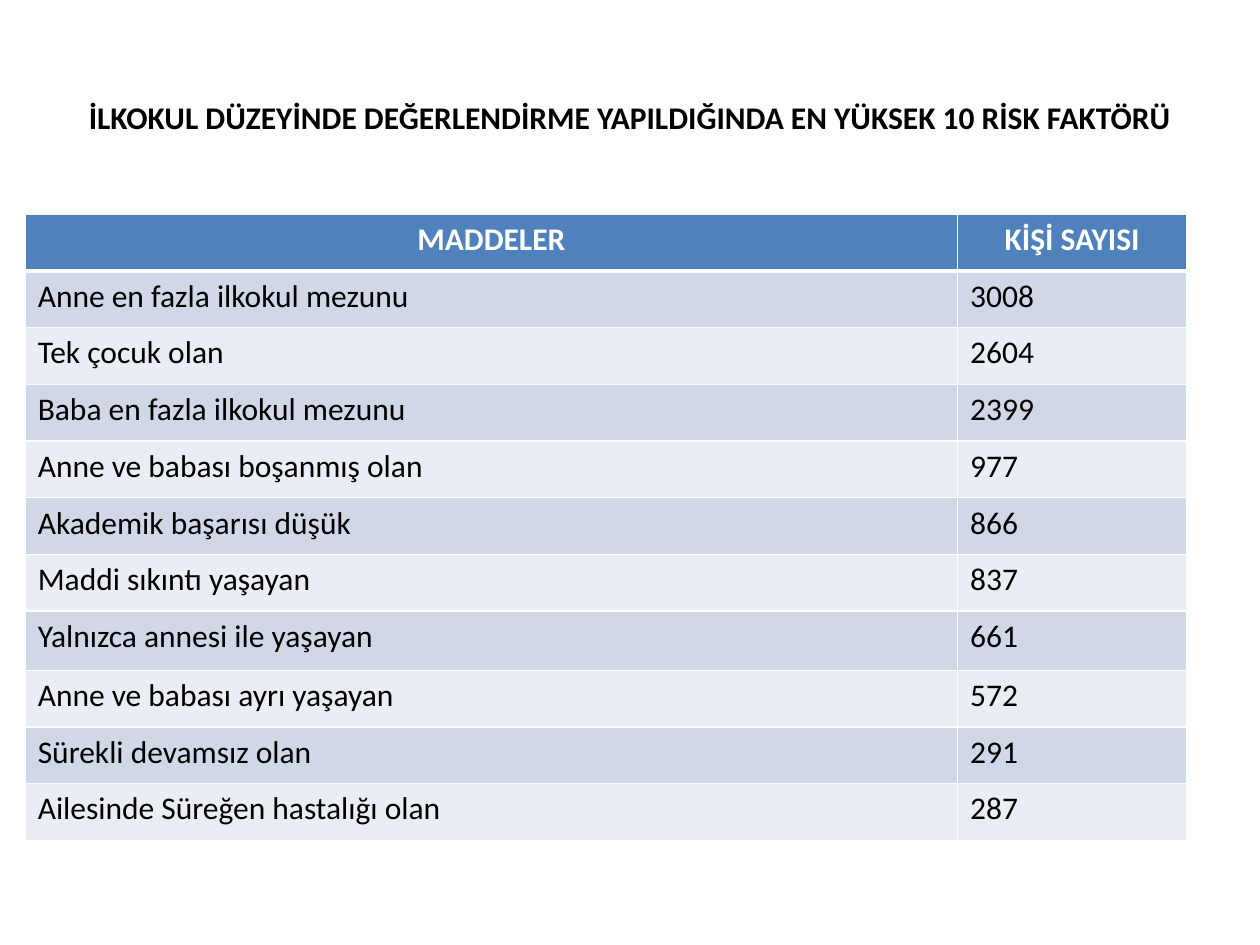
from lxml import etree
from pptx import Presentation
from pptx.dml.color import RGBColor
from pptx.enum.text import MSO_ANCHOR, PP_ALIGN
from pptx.oxml.ns import qn
from pptx.util import Inches, Pt

LEFT, CENTER = PP_ALIGN.LEFT, PP_ALIGN.CENTER
MIDDLE = MSO_ANCHOR.MIDDLE
BLACK = RGBColor(0x00, 0x00, 0x00)
WHITE = RGBColor(0xFF, 0xFF, 0xFF)
HEADER_BLUE = RGBColor(0x4F, 0x81, 0xBD)
BANDS = (RGBColor(0xD0, 0xD8, 0xE8), RGBColor(0xE9, 0xED, 0xF4))

BASE_FONT = {"name": "Calibri", "size": Pt(18)}
TITLE = "İLKOKUL DÜZEYİNDE DEĞERLENDİRME YAPILDIĞINDA EN YÜKSEK 10 RİSK FAKTÖRÜ"
HEADER = ("MADDELER", "KİŞİ SAYISI")
RISK_FACTORS = (
    ("Anne en fazla ilkokul mezunu", 3008),
    ("Tek çocuk olan", 2604),
    ("Baba en fazla ilkokul mezunu", 2399),
    ("Anne ve babası boşanmış olan", 977),
    ("Akademik başarısı düşük", 866),
    ("Maddi sıkıntı yaşayan", 837),
    ("Yalnızca annesi ile yaşayan", 661),
    ("Anne ve babası ayrı yaşayan", 572),
    ("Sürekli devamsız olan", 291),
    ("Ailesinde Süreğen hastalığı olan", 287),
)
COLUMN_WIDTHS = (7.4, 1.82)
ROW_HEIGHT = 0.45
TALL_ROW, TALL_HEIGHT = 7, 0.47


def write_text(text_frame, text, color, bold, alignment):
    """Write one formatted paragraph into a text frame."""
    paragraph = text_frame.paragraphs[0]
    paragraph.alignment = alignment
    run = paragraph.add_run()
    run.text = text
    for name, value in {**BASE_FONT, "bold": bold}.items():
        setattr(run.font, name, value)
    run.font.color.rgb = color


def set_borders(cell, widths):
    """Give a cell white borders, with widths in points by edge tag."""
    properties = cell._tc.get_or_add_tcPr()
    for edge, width in widths.items():
        line = etree.SubElement(properties, qn(f"a:{edge}"), w=str(Pt(width)))
        fill = etree.SubElement(line, qn("a:solidFill"))
        etree.SubElement(fill, qn("a:srgbClr"), val=str(WHITE))


def add_title(slide):
    """Add the centred slide title."""
    shape = slide.shapes.add_textbox(Inches(0.5), Inches(0.3), Inches(9), Inches(1.25))
    text_frame = shape.text_frame
    for name, value in {"word_wrap": True, "vertical_anchor": MIDDLE}.items():
        setattr(text_frame, name, value)
    write_text(text_frame, TITLE, BLACK, True, CENTER)


def format_cell(cell, text, row_index):
    """Fill, border and write a cell as header or banded body."""
    is_header = row_index == 0
    set_borders(cell, {
        "lnL": 1,
        "lnR": 1,
        "lnT": 3 if row_index == 1 else 1,
        "lnB": 3 if is_header else 1,
    })
    cell.fill.solid()
    cell.fill.fore_color.rgb = HEADER_BLUE if is_header else BANDS[(row_index - 1) % 2]
    color, alignment = (WHITE, CENTER) if is_header else (BLACK, LEFT)
    write_text(cell.text_frame, text, color, is_header, alignment)


def add_risk_table(slide):
    """Add the table of risk factors and their counts."""
    rows = (HEADER, *RISK_FACTORS)
    heights = [TALL_HEIGHT if index == TALL_ROW else ROW_HEIGHT for index in range(len(rows))]
    table = slide.shapes.add_table(
        len(rows), len(HEADER), Inches(0.2), Inches(1.7),
        Inches(sum(COLUMN_WIDTHS)), Inches(sum(heights)),
    ).table
    for column, width in zip(table.columns, COLUMN_WIDTHS):
        column.width = Inches(width)
    for row_index, (values, height) in enumerate(zip(rows, heights)):
        table.rows[row_index].height = Inches(height)
        for column_index, value in enumerate(values):
            format_cell(table.cell(row_index, column_index), str(value), row_index)


def main():
    """Build and save the presentation."""
    presentation = Presentation()
    presentation.slide_width = Inches(10)
    presentation.slide_height = Inches(7.5)
    slide = presentation.slides.add_slide(presentation.slide_layouts[6])
    add_risk_table(slide)
    add_title(slide)
    presentation.save("out.pptx")


if __name__ == "__main__":
    main()
